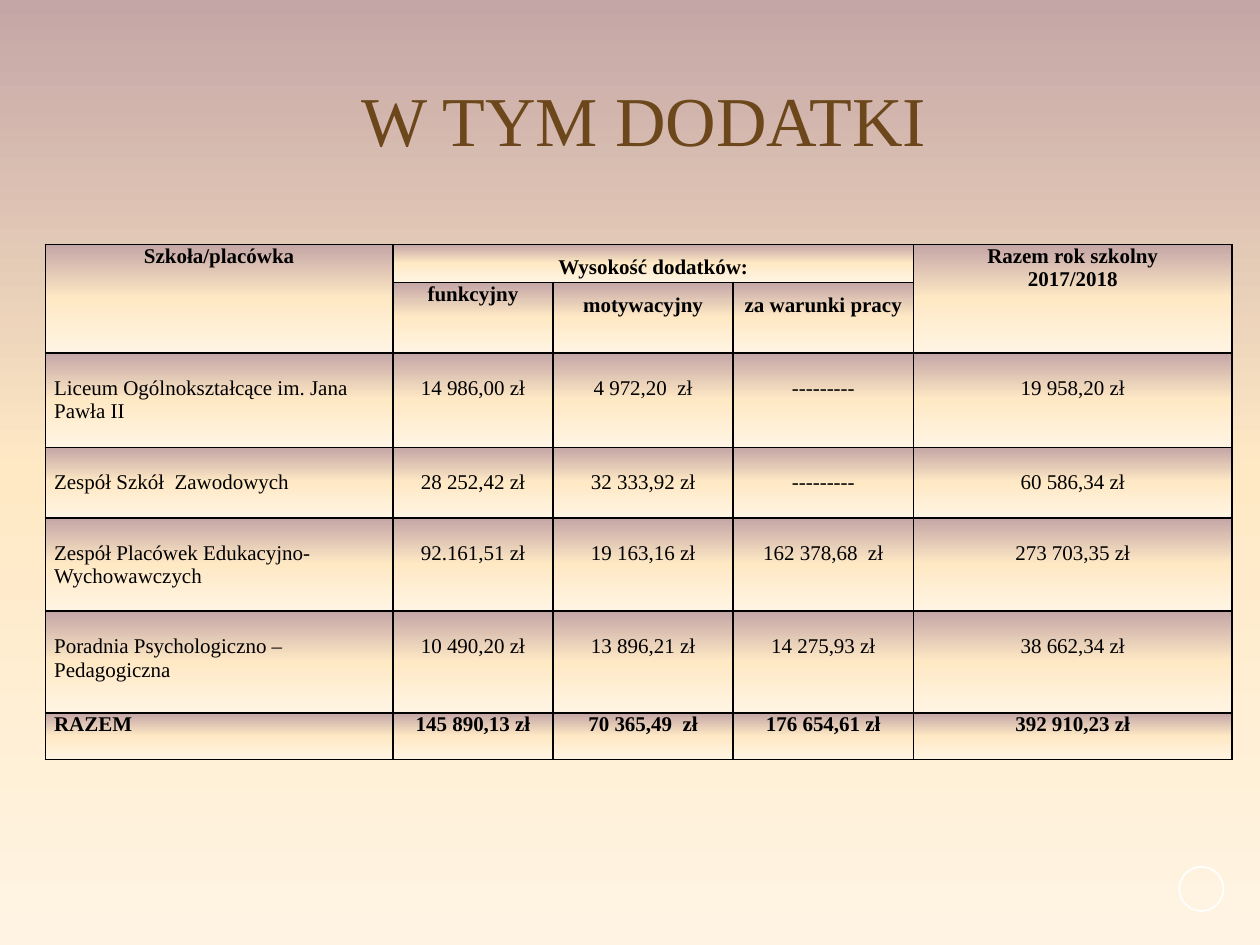
import copy

import lxml.etree
import pptx
import pptx.dml.color
import pptx.enum.shapes
import pptx.enum.text
import pptx.oxml.ns
import pptx.util

Inches = pptx.util.Inches
Pt = pptx.util.Pt
RGBColor = pptx.dml.color.RGBColor
Align = pptx.enum.text.PP_ALIGN
Anchor = pptx.enum.text.MSO_ANCHOR
qn = pptx.oxml.ns.qn

BROWN = RGBColor(0x6B, 0x47, 0x1B)
BLACK = RGBColor(0x00, 0x00, 0x00)
WHITE = RGBColor(0xFF, 0xFF, 0xFF)
ROSE = RGBColor(0xC4, 0xA6, 0xA6)
PEACH = RGBColor(0xFF, 0xE9, 0xC5)
CREAM = RGBColor(0xFF, 0xF4, 0xE3)

COLUMNS = [2.76, 1.27, 1.43, 1.43, 2.53]
HEIGHTS = [0.28, 0.56, 0.75, 0.56, 0.74, 0.81, 0.37]
MERGES = [((0, 0), (1, 0)), ((0, 1), (0, 3)), ((0, 4), (1, 4))]
HEADER_ROWS = 2
WIDE_SPACED = ["Wysokość dodatków:", "motywacyjny", "za warunki pracy"]
NO_AMOUNT = "---------"
ROWS = [
    ["Szkoła/placówka", "Wysokość dodatków:", "", "", "Razem rok szkolny\n2017/2018"],
    ["", "funkcyjny", "motywacyjny", "za warunki pracy", ""],
    ["Liceum Ogólnokształcące im. Jana Pawła II",
     "14 986,00 zł", "4 972,20  zł", NO_AMOUNT, "19 958,20 zł"],
    ["Zespół Szkół  Zawodowych",
     "28 252,42 zł", "32 333,92 zł", NO_AMOUNT, "60 586,34 zł"],
    ["Zespół Placówek Edukacyjno-Wychowawczych",
     "92.161,51 zł", "19 163,16 zł", "162 378,68  zł", "273 703,35 zł"],
    ["Poradnia Psychologiczno – Pedagogiczna",
     "10 490,20 zł", "13 896,21 zł", "14 275,93 zł", "38 662,34 zł"],
    ["RAZEM", "145 890,13 zł", "70 365,49  zł", "176 654,61 zł", "392 910,23 zł"],
]


def apply(target, values):
    for name, value in values.items():
        setattr(target, name, value)


class SlideBuilder:
    font_name = "Times New Roman"
    gradient = [(0, ROSE), (0.5, PEACH), (1, CREAM)]

    def __init__(self, deck):
        self.page = deck.slides.add_slide(deck.slide_layouts[6])

    def paint(self, fill, element):
        fill.gradient()
        fill.gradient_angle = 270
        stop_list = element.find(".//" + qn("a:gsLst"))
        stop_list.append(copy.deepcopy(stop_list[0]))
        for stop, (position, color) in zip(fill.gradient_stops, self.gradient):
            stop.color.rgb = color
            stop.position = position

    def background(self):
        self.paint(self.page.background.fill, self.page.element)

    def add_text(self, frame, text, size, color, bold, align, spacing):
        for index, line in enumerate(text.split("\n")):
            para = frame.paragraphs[0] if index == 0 else frame.add_paragraph()
            apply(para, {"alignment": align, "line_spacing": spacing})
            span = para.add_run()
            span.text = line
            apply(span.font, {"name": self.font_name, "size": Pt(size), "bold": bold})
            span.font.color.rgb = color

    def ring(self, left, top, size):
        ring = self.page.shapes.add_shape(
            pptx.enum.shapes.MSO_SHAPE.OVAL,
            Inches(left), Inches(top), Inches(size), Inches(size))
        ring.shadow.inherit = False
        ring.fill.background()
        ring.line.color.rgb = WHITE
        ring.line.width = Pt(1)

    def title(self, text, left, top, width, height):
        box = self.page.shapes.add_textbox(
            Inches(left), Inches(top), Inches(width), Inches(height))
        apply(box.text_frame, {"word_wrap": True, "vertical_anchor": Anchor.MIDDLE})
        self.add_text(box.text_frame, text, 40, BROWN, False, Align.CENTER, 0.9)

    def borders(self, cell):
        properties = cell._tc.get_or_add_tcPr()
        for index, side in enumerate(["a:lnL", "a:lnR", "a:lnT", "a:lnB"]):
            line = lxml.etree.Element(qn(side), w=str(Pt(1)))
            fill = lxml.etree.SubElement(line, qn("a:solidFill"))
            lxml.etree.SubElement(fill, qn("a:srgbClr"), val=str(BLACK))
            properties.insert(index, line)

    def cell(self, cell, text, bold, align, top):
        apply(cell, {"margin_left": Inches(0.07), "margin_right": Inches(0.07),
                     "margin_top": Inches(top), "margin_bottom": 0,
                     "vertical_anchor": Anchor.TOP})
        self.paint(cell.fill, cell._tc)
        self.borders(cell)
        spacing = 1.5 if text in WIDE_SPACED else 1.0
        self.add_text(cell.text_frame, text, 12, BLACK, bold, align, spacing)

    def table(self, left, top):
        table = self.page.shapes.add_table(
            len(ROWS), len(COLUMNS), Inches(left), Inches(top),
            Inches(sum(COLUMNS)), Inches(sum(HEIGHTS))).table
        apply(table, {"first_row": False, "horz_banding": False})
        for column, width in zip(table.columns, COLUMNS):
            column.width = Inches(width)
        for row, height in zip(table.rows, HEIGHTS):
            row.height = Inches(height)
        for start, end in MERGES:
            table.cell(*start).merge(table.cell(*end))
        for i, texts in enumerate(ROWS):
            header = i < HEADER_ROWS
            bold = header or i == len(ROWS) - 1
            for j, text in enumerate(texts):
                align = Align.LEFT if j == 0 and not header else Align.CENTER
                self.cell(table.cell(i, j), text, bold, align, 0 if bold else 0.19)


def main():
    deck = pptx.Presentation()
    apply(deck, {"slide_width": Inches(10), "slide_height": Inches(7.5)})
    builder = SlideBuilder(deck)
    builder.background()
    builder.ring(9.36, 6.88, 0.35)
    builder.title("W TYM DODATKI", 0.36, 0.52, 9.5, 0.92)
    builder.table(0.36, 1.94)
    deck.save("out.pptx")


if __name__ == "__main__":
    main()
